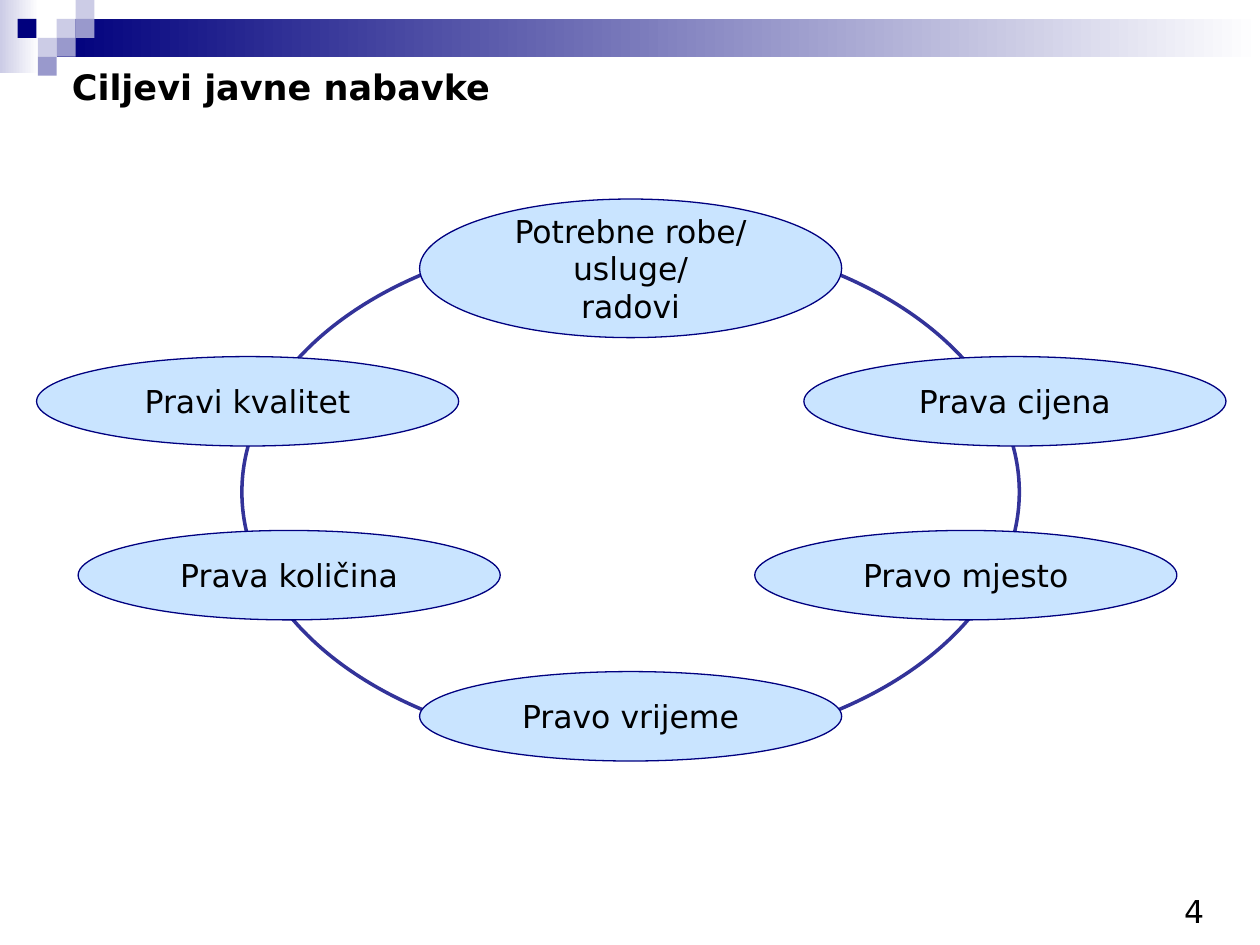
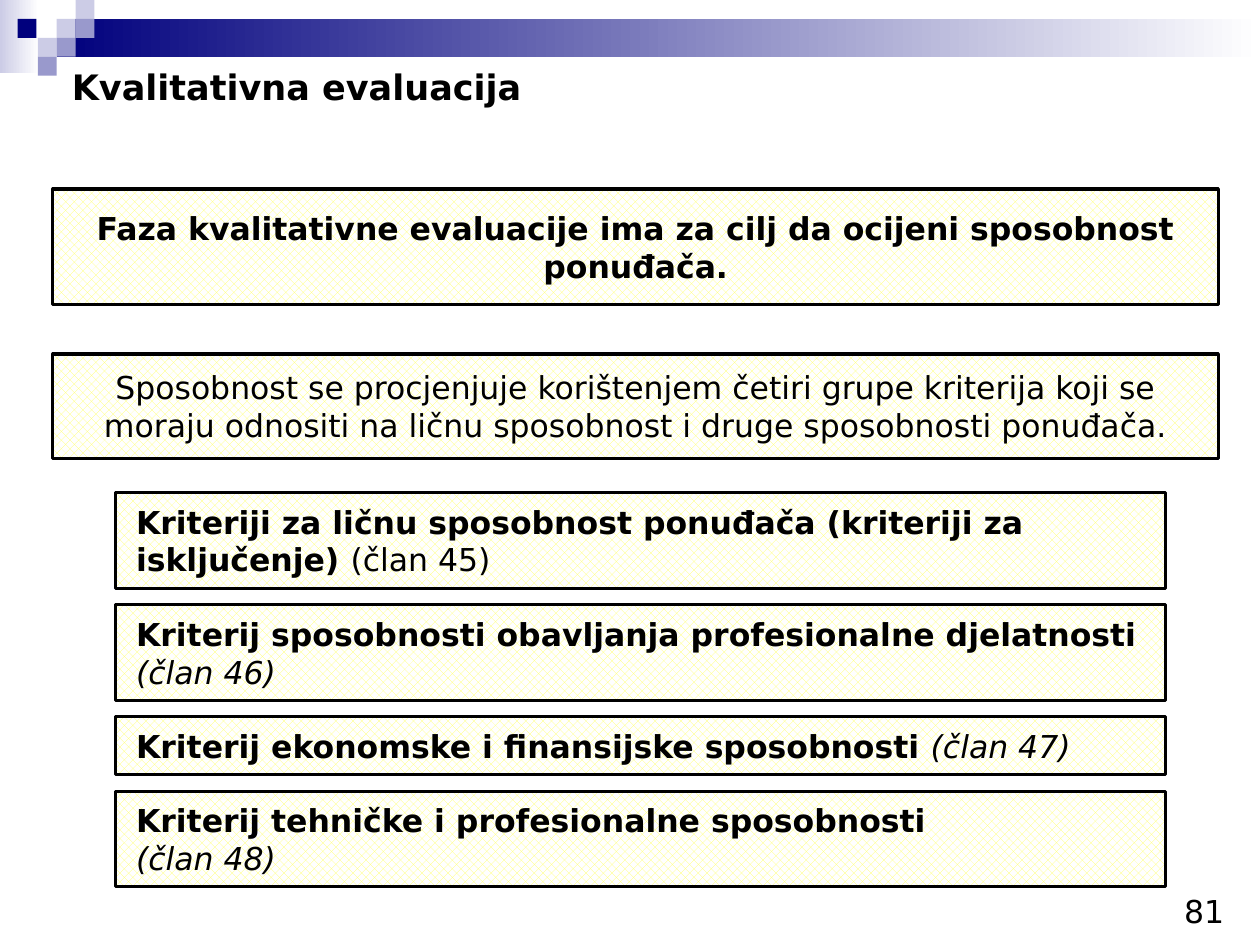
from pptx import Presentation
from pptx.dml.color import RGBColor
from pptx.enum.dml import MSO_PATTERN as Pattern
from pptx.enum.shapes import MSO_SHAPE as Shape
from pptx.enum.text import MSO_ANCHOR as Anchor, MSO_AUTO_SIZE as Fit, PP_ALIGN as Align
from pptx.util import Inches, Pt

BLACK = RGBColor(0x00, 0x00, 0x00)
WHITE = RGBColor(0xFF, 0xFF, 0xFF)
NAVY = RGBColor(0x00, 0x00, 0x7D)
EDGE = RGBColor(0x00, 0x00, 0x80)
RING = RGBColor(0x33, 0x33, 0x99)
LILAC = RGBColor(0x99, 0x99, 0xCC)
PALE = RGBColor(0xCC, 0xCC, 0xE6)
SKY = RGBColor(0xC9, 0xE4, 0xFF)
YELLOW = RGBColor(0xFF, 0xFF, 0x66)

WIDTH, HEIGHT = Inches(10), Inches(7.5)
COLS, ROWS = 100, 75
TILE = 1.5
TILES = [
    (3, 1, PALE), (4, 0, PALE), (4, 1, LILAC), (2, 2, PALE),
    (0.93, 1, NAVY), (3, 2, LILAC), (2, 3, LILAC),
]


class Deck:
    font = "DejaVu Sans"
    size = 18

    def __init__(self):
        self.file = Presentation()
        self.file.slide_width, self.file.slide_height = WIDTH, HEIGHT
        self.slide = None

    def grid(self, x, y, w, h):
        col, row = WIDTH / COLS, HEIGHT / ROWS
        return [int(n) for n in (x * col, y * row, w * col, h * row)]

    def start(self, title, width, number):
        self.slide = self.file.slides.add_slide(self.file.slide_layouts[5])
        self.fade((0, 0, 3.1, 5.8), PALE)
        self.fade((4.5, 1.5, 95.5, 3), NAVY)
        for col, row, color in TILES:
            self.block(Shape.RECTANGLE, (col * TILE, row * TILE, TILE, TILE), color)
        self.title(title, width)
        self.number(number)

    def title(self, text, width):
        head = self.slide.shapes.title
        head.left, head.top, head.width, head.height = self.grid(4.7, 4.7, width, 4.4)
        head.text_frame.auto_size = Fit.NONE
        self.label(head, [[(text, True, False)]], Align.LEFT, Anchor.TOP, size=20)

    def number(self, value):
        box = self.slide.shapes.add_textbox(*self.grid(93, 70.3, 6.4, 4))
        self.label(box, [[(value, False, False)]], Align.LEFT, Anchor.TOP, wrap=False)

    def block(self, kind, place, color=None, line=None, weight=0.75):
        item = self.slide.shapes.add_shape(kind, *self.grid(*place))
        item.shadow.inherit = False
        if color is None:
            item.fill.background()
        else:
            item.fill.solid()
            item.fill.fore_color.rgb = color
        if line is None:
            item.line.fill.background()
        else:
            item.line.color.rgb = line
            item.line.width = Pt(weight)
        return item

    def fade(self, place, color):
        fill = self.block(Shape.RECTANGLE, place).fill
        fill.gradient()
        fill.gradient_angle = 0
        for stop, tone in zip(fill.gradient_stops, (color, WHITE)):
            stop.color.rgb = tone

    def bubble(self, place, lines):
        item = self.block(Shape.OVAL, place, SKY, EDGE)
        self.label(item, [[(line, False, False)] for line in lines],
                   Align.CENTER, wrap=len(lines) > 1)

    def panel(self, place, runs, align=Align.CENTER, pad=(0.1, 0)):
        item = self.block(Shape.RECTANGLE, place, WHITE, BLACK, 1.75)
        item.fill.patterned()
        item.fill.pattern = Pattern.PERCENT_50
        item.fill.fore_color.rgb = YELLOW
        item.fill.back_color.rgb = WHITE
        frame = item.text_frame
        frame.margin_left = frame.margin_right = Inches(pad[0])
        frame.margin_top = frame.margin_bottom = Inches(pad[1])
        self.label(item, [runs], align)

    def label(self, item, lines, align, anchor=Anchor.MIDDLE, size=None, wrap=True):
        frame = item.text_frame
        frame.word_wrap = wrap
        frame.vertical_anchor = anchor
        for index, runs in enumerate(lines):
            para = frame.add_paragraph() if index else frame.paragraphs[0]
            para.alignment = align
            for text, bold, slant in runs:
                if text == "\n":
                    para.add_line_break()
                    continue
                run = para.add_run()
                run.text = text
                font = run.font
                font.name, font.size = self.font, Pt(size or self.size)
                font.bold, font.italic = bold, slant
                font.color.rgb = BLACK


def goals(deck):
    deck.start("Ciljevi javne nabavke", 90, "4")
    deck.block(Shape.OVAL, (19.2, 18.6, 61.7, 40.9), line=RING, weight=2)
    wide, high = 33.5, 7.1
    deck.bubble((33.3, 15.8, wide, 11), ["Potrebne robe/", "usluge/", "radovi"])
    for x, y, text in [
        (2.9, 28.3, "Pravi kvalitet"),
        (6.2, 42.1, "Prava količina"),
        (33.3, 53.3, "Pravo vrijeme"),
        (63.8, 28.3, "Prava cijena"),
        (59.9, 42.1, "Pravo mjesto"),
    ]:
        deck.bubble((x, y, wide, high), [text])


def review(deck):
    deck.start("Kvalitativna evaluacija", 74, "81")
    deck.panel((4.2, 15, 92.5, 9.2), [
        ("Faza kvalitativne evaluacije ima za cilj da ocijeni sposobnost ponuđača.", True, False)])
    deck.panel((4.2, 28.1, 92.5, 8.3), [
        ("Sposobnost se procjenjuje korištenjem četiri grupe kriterija koji se moraju "
         "odnositi na ličnu sposobnost i druge sposobnosti ponuđača.", False, False)])
    top, gap = 39.1, 1.3
    for high, runs in [
        (7.6, [("Kriteriji za ličnu sposobnost ponuđača (kriteriji za isključenje) ", True, False),
               ("(član 45)", False, False)]),
        (7.6, [("Kriterij sposobnosti obavljanja profesionalne djelatnosti ", True, False),
               ("(član 46)", False, True)]),
        (4.6, [("Kriterij ekonomske i finansijske sposobnosti ", True, False),
               ("(član 47)", False, True)]),
        (7.6, [("Kriterij tehničke i profesionalne sposobnosti", True, False),
               ("\n", True, False),
               ("(član 48)", False, True)]),
    ]:
        deck.panel((9.2, top, 83.3, high), runs, Align.LEFT, (0.16, 0.08))
        top += high + gap


def main():
    deck = Deck()
    goals(deck)
    review(deck)
    deck.file.save("out.pptx")


if __name__ == "__main__":
    main()
